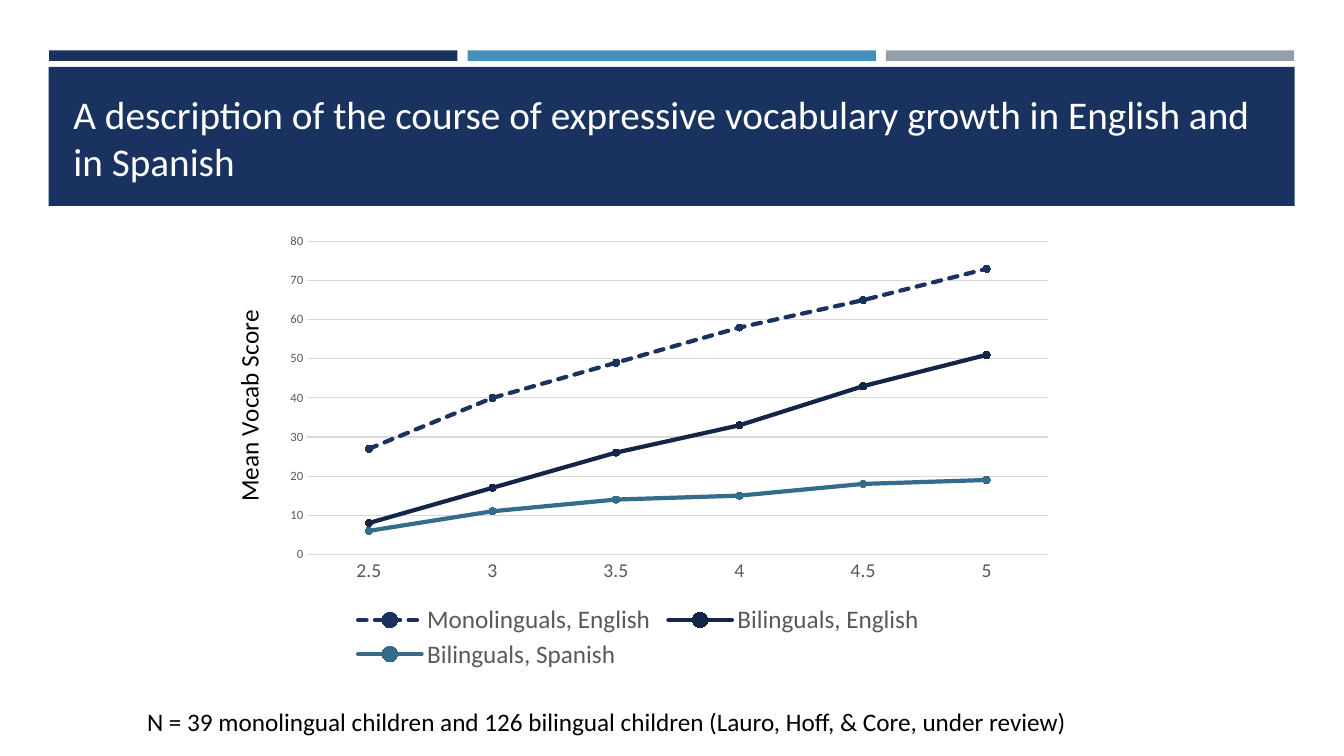
from dataclasses import dataclass

from lxml.etree import SubElement
from pptx import Presentation
from pptx.chart.data import CategoryChartData
from pptx.dml.color import RGBColor
from pptx.enum.chart import XL_CHART_TYPE as ChartType
from pptx.enum.chart import XL_LEGEND_POSITION as LegendPos
from pptx.enum.chart import XL_MARKER_STYLE as Marker
from pptx.enum.chart import XL_TICK_MARK as Tick
from pptx.enum.dml import MSO_LINE as Dash
from pptx.enum.shapes import MSO_SHAPE as Shape
from pptx.enum.text import MSO_ANCHOR as Anchor
from pptx.oxml.ns import qn
from pptx.util import Inches, Pt

SLIDE_W, SLIDE_H = Inches(13.33), Inches(7.5)


@dataclass(frozen=True)
class Theme:
    font: str = "Calibri"
    navy: str = "1A3260"
    blue: str = "4590B8"
    gray: str = "969FA7"
    midnight: str = "142648"
    teal: str = "346C8A"
    white: str = "FFFFFF"
    black: str = "000000"
    label: str = "595959"
    grid: str = "D9D9D9"
    title_size: int = 28
    body_size: int = 18
    category_size: int = 14
    chart_size: int = 10
    value_size: int = 9
    series_width: float = 3
    grid_width: float = 0.75


THEME = Theme()


@dataclass(frozen=True)
class Box:
    """A rectangle in percent of the area that holds it."""
    left: float
    top: float
    width: float
    height: float

    def on_slide(self) -> tuple[int, int, int, int]:
        return (int(SLIDE_W * self.left / 100), int(SLIDE_H * self.top / 100),
                int(SLIDE_W * self.width / 100), int(SLIDE_H * self.height / 100))


@dataclass(frozen=True)
class Group:
    name: str
    scores: tuple[int, ...]
    color: str
    dashed: bool = False


AGES = ("2.5", "3", "3.5", "4", "4.5", "5")
GROUPS = (
    Group("Monolinguals, English", (27, 40, 49, 58, 65, 73), THEME.navy, dashed=True),
    Group("Bilinguals, English", (8, 17, 26, 33, 43, 51), THEME.midnight),
    Group("Bilinguals, Spanish", (6, 11, 14, 15, 18, 19), THEME.teal),
)

BAR_COLORS = (THEME.navy, THEME.blue, THEME.gray)
BAR_PITCH = 31.13
BANNER = Box(3.62, 8.85, 92.7, 18.4)
TITLE = Box(4.73, 10.67, 90.45, 14.4)
CHART = Box(15.6, 29.87, 63.68, 59.47)
NOTE = Box(10.2, 92.8, 73.35, 5.33)

# Shares of the chart area
PLOT = Box(11.4, 3.5, 86.6, 69.6)
LEGEND = Box(16.2, 83.5, 67.8, 16)
AXIS_TITLE = Box(2, 17.8, 0, 0)


def rgb(color: str) -> RGBColor:
    return RGBColor.from_string(color)


def set_font(font, size: float, color: str) -> None:
    font.name = THEME.font
    font.size = Pt(size)
    font.bold = False
    font.color.rgb = rgb(color)


def set_line(line, color: str, width: float) -> None:
    line.color.rgb = rgb(color)
    line.width = Pt(width)


def add_rect(slide, box: Box, color: str) -> None:
    sp = slide.shapes.add_shape(Shape.RECTANGLE, *box.on_slide())
    sp.shadow.inherit = False
    sp.fill.solid()
    sp.fill.fore_color.rgb = rgb(color)
    sp.line.fill.background()


def add_text(slide, box: Box, text: str, *, size: float = THEME.body_size,
             color: str = THEME.black, anchor: Anchor = Anchor.TOP) -> None:
    tf = slide.shapes.add_textbox(*box.on_slide()).text_frame
    tf.word_wrap = True
    tf.vertical_anchor = anchor
    r = tf.paragraphs[0].add_run()
    r.text = text
    set_font(r.font, size, color)


def place(parent, box: Box, after: str = "", inner: bool = False) -> None:
    """Fix a chart part's position, with the layout put behind the child named by after."""
    for old in parent.findall(qn("c:layout")):
        parent.remove(old)
    layout = parent.makeelement(qn("c:layout"))
    if after:
        parent.find(qn(after)).addnext(layout)
    else:
        parent.insert(0, layout)
    manual = SubElement(layout, qn("c:manualLayout"))
    settings = {"layoutTarget": "inner"} if inner else {}
    settings |= {"xMode": "edge", "yMode": "edge",
                 "x": box.left / 100, "y": box.top / 100}
    if box.width:
        settings |= {"w": box.width / 100, "h": box.height / 100}
    for tag, value in settings.items():
        SubElement(manual, qn(f"c:{tag}")).set("val", str(value))


def style_axes(chart) -> None:
    ages, scores = chart.category_axis, chart.value_axis
    for axis, size in ((ages, THEME.category_size), (scores, THEME.value_size)):
        axis.major_tick_mark = axis.minor_tick_mark = Tick.NONE
        set_font(axis.tick_labels.font, size, THEME.label)
    set_line(ages.format.line, THEME.grid, THEME.grid_width)
    scores.minimum_scale, scores.maximum_scale, scores.major_unit = 0, 80, 10
    scores.format.line.fill.background()
    set_line(scores.major_gridlines.format.line, THEME.grid, THEME.grid_width)

    tf = scores.axis_title.text_frame
    r = tf.paragraphs[0].add_run()
    r.text = "Mean Vocab Score"
    set_font(r.font, THEME.body_size, THEME.black)
    body = chart.element.xpath("c:chart/c:plotArea/c:valAx/c:title/c:tx/c:rich/a:bodyPr")[0]
    body.set("rot", "-5400000")
    body.set("vert", "horz")


def style_series(series, group: Group) -> None:
    series.smooth = False
    set_line(series.format.line, group.color, THEME.series_width)
    if group.dashed:
        series.format.line.dash_style = Dash.SQUARE_DOT
    marker = series.marker
    marker.style, marker.size = Marker.CIRCLE, 5
    marker.format.fill.solid()
    marker.format.fill.fore_color.rgb = rgb(group.color)
    set_line(marker.format.line, group.color, THEME.grid_width)


def add_growth_chart(slide) -> None:
    data = CategoryChartData()
    data.categories = AGES
    for group in GROUPS:
        data.add_series(group.name, group.scores)
    chart = slide.shapes.add_chart(ChartType.LINE_MARKERS, *CHART.on_slide(), data).chart
    set_font(chart.font, THEME.chart_size, THEME.black)
    chart.has_title = False
    chart.plots[0].vary_by_categories = False
    style_axes(chart)
    for series, group in zip(chart.plots[0].series, GROUPS):
        style_series(series, group)

    chart.has_legend = True
    chart.legend.position = LegendPos.BOTTOM
    chart.legend.include_in_layout = False
    set_font(chart.legend.font, THEME.body_size, THEME.label)

    root = chart.element
    for line in root.xpath("c:chart/c:plotArea/c:lineChart/c:ser/c:spPr/a:ln"):
        line.set("cap", "rnd")
    place(root.xpath("c:chart/c:plotArea")[0], PLOT, inner=True)
    place(root.xpath("c:chart/c:legend")[0], LEGEND, after="c:legendPos")
    place(root.xpath("c:chart/c:plotArea/c:valAx/c:title")[0], AXIS_TITLE, after="c:tx")


def main() -> None:
    prs = Presentation()
    prs.slide_width, prs.slide_height = SLIDE_W, SLIDE_H
    slide = prs.slides.add_slide(prs.slide_layouts[6])
    for i, color in enumerate(BAR_COLORS):
        add_rect(slide, Box(3.66 + i * BAR_PITCH, 6.67, 30.38, 1.4), color)
    add_rect(slide, BANNER, THEME.navy)
    add_text(slide, TITLE, "A description of the course of expressive vocabulary growth "
             "in English and in Spanish",
             size=THEME.title_size, color=THEME.white, anchor=Anchor.BOTTOM)
    add_growth_chart(slide)
    add_text(slide, NOTE, "N = 39 monolingual children and 126 bilingual children "
             "(Lauro, Hoff, & Core, under review)")
    prs.save("out.pptx")


if __name__ == "__main__":
    main()
